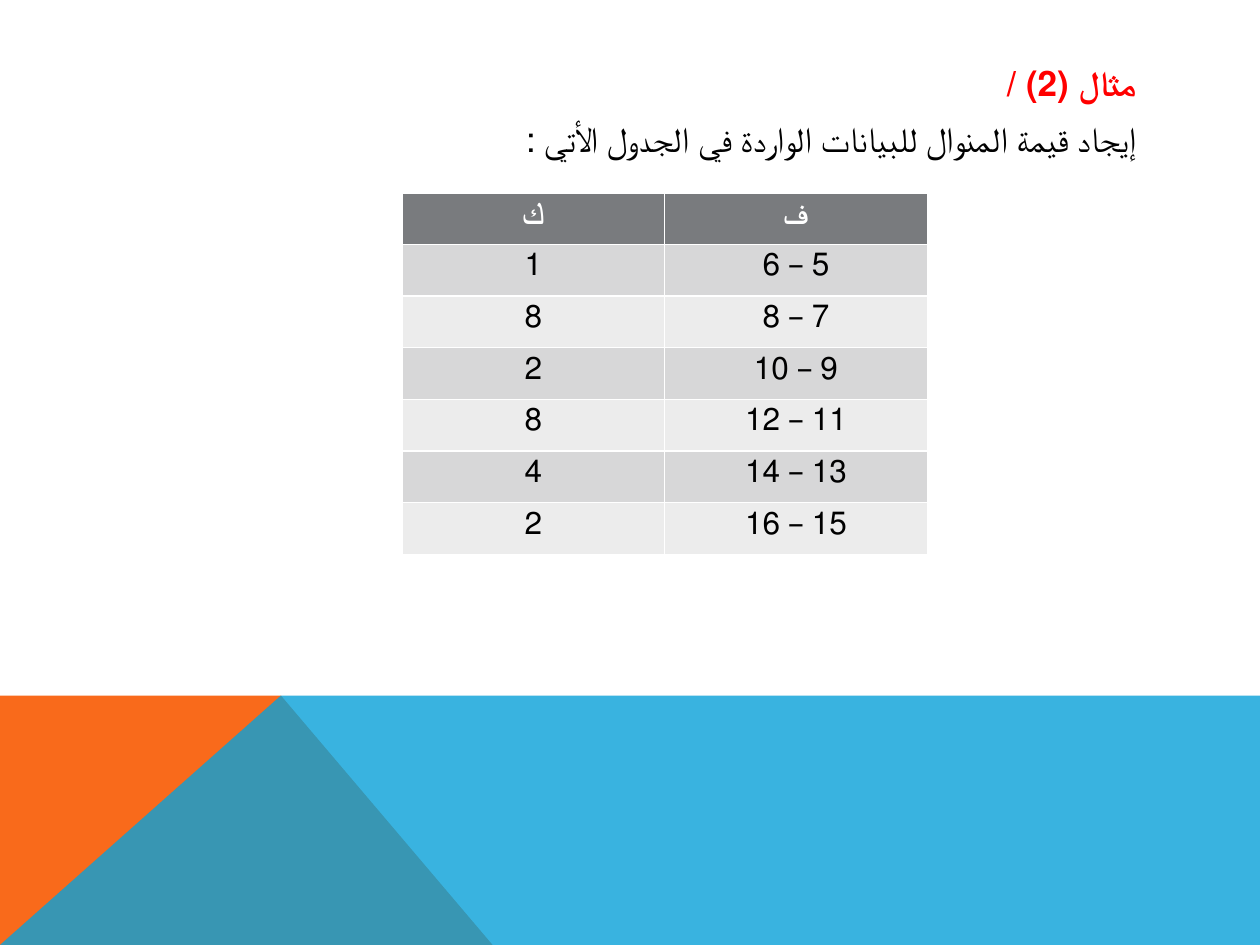
from pptx import Presentation
from pptx.dml.color import RGBColor
from pptx.enum.text import MSO_ANCHOR, MSO_AUTO_SIZE, PP_ALIGN
from pptx.oxml.ns import qn
from pptx.util import Inches, Pt
from lxml.etree import SubElement

# Content
LINES = [
    ("مثال (2) /", "accent", True),
    ("إيجاد قيمة المنوال للبيانات الواردة في الجدول الأتي :", "text", False),
]
ROWS = [
    ("ك", "ف"),
    ("1", "5 – 6"),
    ("8", "7 – 8"),
    ("2", "9 – 10"),
    ("8", "11 – 12"),
    ("4", "13 – 14"),
    ("2", "15 – 16"),
]

THEME = {
    "font": "Cabin", "body_size": 20, "table_size": 18,
    "accent": "FF0000", "text": "000000", "header_text": "FFFFFF",
    "header": "797B7E", "odd": "D7D7D8", "even": "ECECEC",
    "orange": "F96A1B", "blue": "08A1D9",
}

# Layout in inches
WIDTH, HEIGHT = 10, 7.5
BODY = (0.9, 0.44, 8.22, 4.68)
TABLE_LEFT, TABLE_TOP, TABLE_WIDTH, ROW_HEIGHT = 3.19, 1.53, 4.17, 0.41
BAND_TOP, PEAK_X, FOOT_X = 5.52, 2.23, 3.91
BANDS = [
    ("orange", None, [(0, HEIGHT), (0, BAND_TOP), (PEAK_X, BAND_TOP), (FOOT_X, HEIGHT)]),
    ("blue", 80, [(0, HEIGHT), (PEAK_X, BAND_TOP), (WIDTH, BAND_TOP), (WIDTH, HEIGHT)]),
]


def color(key):
    return RGBColor.from_string(THEME[key])


def add_band(slide, key, opacity, points):
    start, *rest = [(Inches(x), Inches(y)) for x, y in points]
    builder = slide.shapes.build_freeform(*start)
    builder.add_line_segments(rest, close=True)
    s = builder.convert_to_shape()
    s.shadow.inherit = False
    s.line.fill.background()
    s.fill.solid()
    s.fill.fore_color.rgb = color(key)
    if opacity:
        clr = s.fill._xPr.find(qn("a:solidFill"))[0]
        SubElement(clr, qn("a:alpha")).set("val", str(opacity * 1000))


def format_rtl(p, align, size, color_key, bold):
    p.alignment = align
    p._p.get_or_add_pPr().set("rtl", "1")
    for r in p.runs:
        r.font.name = THEME["font"]
        r.font.size = Pt(size)
        r.font.bold = bold
        r.font.color.rgb = color(color_key)


def fill_body(sp):
    sp.left, sp.top, sp.width, sp.height = map(Inches, BODY)
    tf = sp.text_frame
    tf.word_wrap = True
    tf.auto_size = MSO_AUTO_SIZE.NONE
    tf.vertical_anchor = MSO_ANCHOR.TOP
    tf.text = "\n".join(text for text, _, _ in LINES)
    for i, (p, (_, key, bold)) in enumerate(zip(tf.paragraphs, LINES)):
        SubElement(p._p.get_or_add_pPr(), qn("a:buNone"))
        p.space_before = Pt(8 if i else 0)
        format_rtl(p, PP_ALIGN.RIGHT, THEME["body_size"], key, bold)


def add_frequency_table(slide):
    # The default table style supplies the white borders
    table = slide.shapes.add_table(
        len(ROWS), len(ROWS[0]), Inches(TABLE_LEFT), Inches(TABLE_TOP),
        Inches(TABLE_WIDTH), Inches(ROW_HEIGHT * len(ROWS))).table
    for i, row in enumerate(ROWS):
        is_header = i == 0
        fill = "header" if is_header else "odd" if i % 2 else "even"
        for cell, text in zip(table.rows[i].cells, row):
            cell.text = text
            cell.fill.solid()
            cell.fill.fore_color.rgb = color(fill)
            format_rtl(cell.text_frame.paragraphs[0], PP_ALIGN.CENTER, THEME["table_size"],
                       "header_text" if is_header else "text", is_header)


def main():
    prs = Presentation()
    prs.slide_width, prs.slide_height = Inches(WIDTH), Inches(HEIGHT)
    slide = prs.slides.add_slide(prs.slide_layouts[1])

    # The slide has no title
    title = slide.shapes.title._element
    title.getparent().remove(title)

    # Bands along the bottom, then text and table
    for band in BANDS:
        add_band(slide, *band)
    fill_body(slide.placeholders[1])
    add_frequency_table(slide)
    prs.save("out.pptx")


if __name__ == "__main__":
    main()
